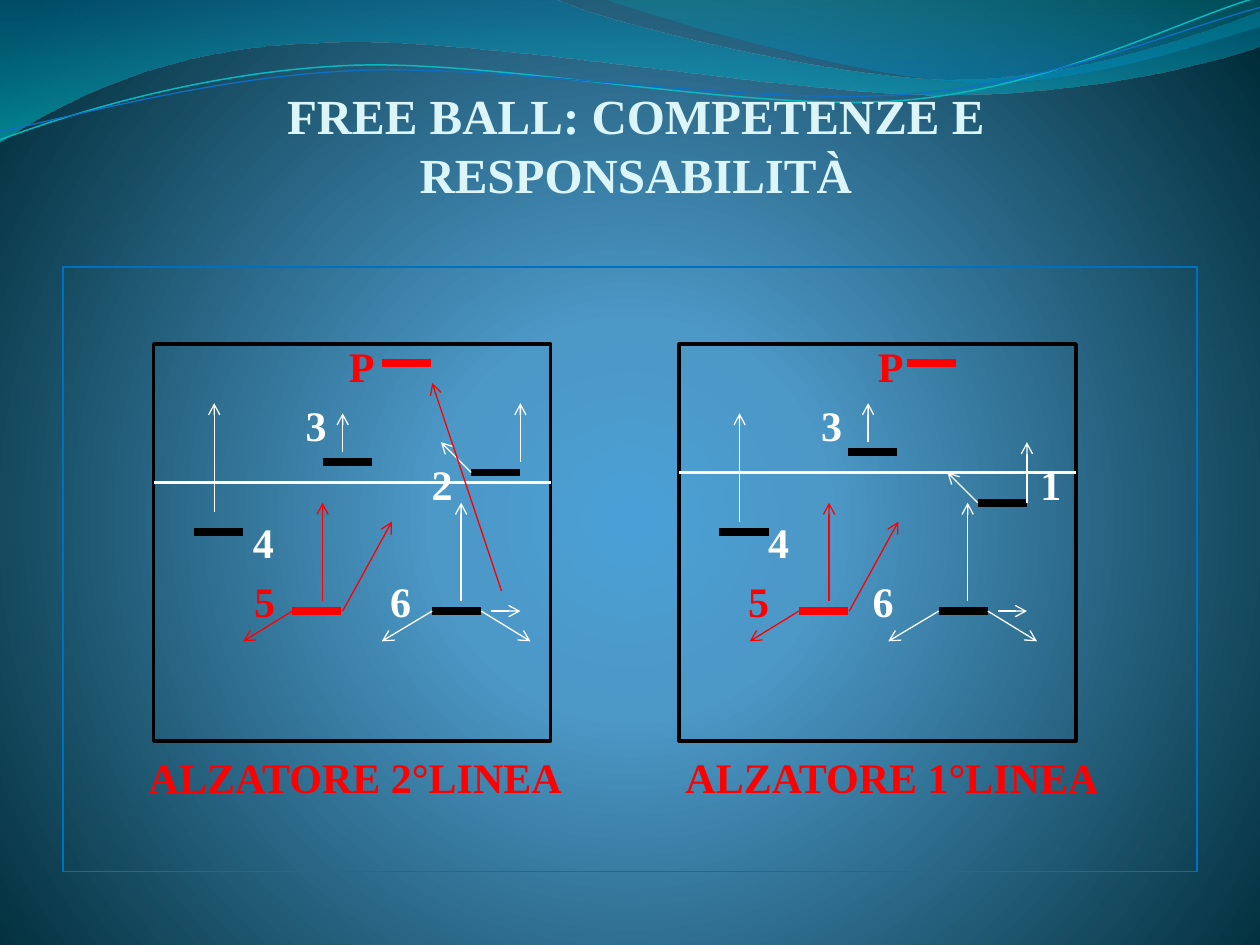
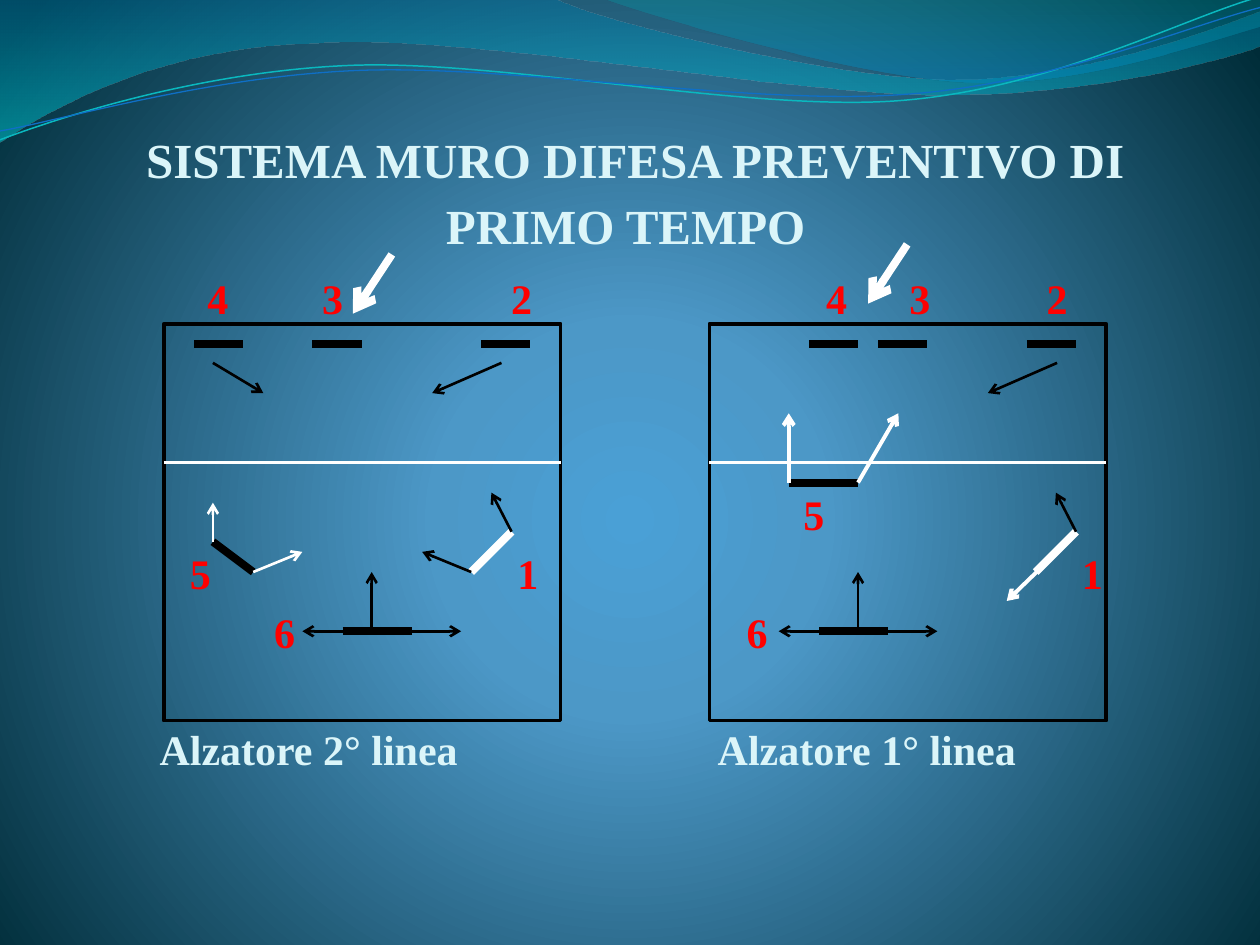
from lxml import etree
from pptx import Presentation
from pptx import util as u
from pptx.dml.color import RGBColor
from pptx.enum import shapes, text
from pptx.oxml import ns

FONT = "Times New Roman"
WHITE, BLACK, RED, BLUE, PALE = "FFFFFF", "000000", "FF0000", "0070C0", "DBF5F9"
BODY = (0.5, 2.12, 9, 4.8)
COURT_SIDE = 3.15
DASH = 0.39
ROW_HEIGHT, ROW_GAP = 32, 1.5

BACKDROP = [(0, "4AA0D6", 100), (25, "4C98C7", 100), (100, "002C38", 100)]
WIDE_WAVE = [(0, 0), (4.4, -0.01), (4.76, 0.17, 6.64, 0.63, 7.58, 0.63),
             (8.53, 0.63, 9.58, 0.26, 10, 0.09), (10.01, 0.36),
             (9.83, 0.44, 8.7, 0.76, 7.46, 0.75), (6.22, 0.75, 3.82, 0.28, 2.57, 0.34),
             (1.29, 0.36, 0.46, 0.83, -0.01, 1.13)]
RIGHT_WAVE = [(4.79, -0.01), (5.09, 0.11, 6.82, 0.62, 7.69, 0.65),
              (8.56, 0.69, 9.61, 0.32, 10, 0.21), (10, 0)]
TEAL_CURVE = [(0, 1.11), (0.48, 0.93, 1.58, 0.57, 2.77, 0.52),
              (3.95, 0.47, 5.93, 0.89, 7.13, 0.8), (8.33, 0.71, 9.38, 0.15, 9.98, -0.02)]
BLUE_CURVE = [(0, 1.04), (0.47, 0.96, 1.64, 0.61, 2.83, 0.56),
              (4.03, 0.51, 5.97, 0.84, 7.17, 0.75), (8.36, 0.67, 9.41, 0.21, 10, 0.06)]


def rgb(value):
    """Turn a hex string into a colour."""
    return RGBColor.from_string(value)


def add_child(parent, tag, **attributes):
    """Append a drawing element with the given attributes."""
    child = etree.SubElement(parent, ns.qn(tag))
    for name, value in attributes.items():
        child.set(name, str(value))
    return child


def set_gradient(owner, fill, stops, centre=None):
    """Give a fill a vertical gradient, or a round one about a centre."""
    fill.solid()
    solid = owner.find(ns.qn("a:solidFill"))
    gradient = etree.Element(ns.qn("a:gradFill"), rotWithShape="1")
    stop_list = add_child(gradient, "a:gsLst")
    for position, colour, opacity in stops:
        stop = add_child(stop_list, "a:gs", pos=position * 1000)
        tone = add_child(stop, "a:srgbClr", val=colour)
        add_child(tone, "a:alpha", val=opacity * 1000)
    if centre:
        circle = add_child(gradient, "a:path", path="circle")
        edges = {side: percent * 1000 for side, percent in zip("ltrb", centre)}
        add_child(circle, "a:fillToRect", **edges)
    else:
        add_child(gradient, "a:lin", ang=90 * 60000, scaled=0)
    owner.replace(solid, gradient)


def add_outline(slide, outline, close):
    """Draw a freeform of lines and cubic curves, without shadow."""
    points = [(u.Inches(x), u.Inches(y)) for segment in outline
              for x, y in zip(segment[::2], segment[1::2])]
    builder = slide.shapes.build_freeform(*points[0])
    builder.add_line_segments(points[1:], close=close)
    shape = builder.convert_to_shape()
    shape.shadow.inherit = False
    route = shape.element.find(".//" + ns.qn("a:path"))
    lines = iter(route.findall(ns.qn("a:lnTo")))
    for segment in outline[1:]:
        group = [next(lines) for _ in segment[::2]]
        if len(group) == 3:
            curve = etree.Element(ns.qn("a:cubicBezTo"))
            group[0].addprevious(curve)
            for line in group:
                curve.append(line[0])
                route.remove(line)
    return shape


def add_wave(slide, outline, stops):
    """Draw a translucent band at the top."""
    wave = add_outline(slide, outline, True)
    set_gradient(wave.element.spPr, wave.fill, stops)
    wave.line.fill.background()


def add_curve(slide, outline, colour, width):
    """Draw a thin curved line at the top."""
    curve = add_outline(slide, outline, False)
    curve.fill.background()
    curve.line.color.rgb = rgb(colour)
    curve.line.width = u.Pt(width)


def style_run(span, size, colour):
    """Set the bold lettering that all text shares."""
    span.font.name, span.font.size, span.font.bold = FONT, u.Pt(size), True
    span.font.color.rgb = rgb(colour)


def clear_margins(frame):
    """Remove the insets of a text frame and let it wrap."""
    frame.margin_left = frame.margin_right = frame.margin_top = frame.margin_bottom = 0
    frame.word_wrap = True


def add_title(slide, words, place, spacing, indent):
    """Add the centred title."""
    box = slide.shapes.add_textbox(*map(u.Inches, place))
    frame = box.text_frame
    clear_margins(frame)
    frame.vertical_anchor = text.MSO_ANCHOR.BOTTOM
    frame.text = words
    para = frame.paragraphs[0]
    para.alignment = text.PP_ALIGN.CENTER
    para.line_spacing = u.Pt(spacing)
    para._p.get_or_add_pPr().set("indent", str(u.Inches(indent)))
    style_run(para.runs[0], 28, PALE)


def fill_body(box, top, rows):
    """Write rows of labels, each centred on a tab stop."""
    frame = box.text_frame
    clear_margins(frame)
    frame.margin_top = u.Inches(top)
    frame.vertical_anchor = text.MSO_ANCHOR.TOP
    for number, (gap, labels) in enumerate(rows):
        para = frame.add_paragraph() if number else frame.paragraphs[0]
        para.alignment = text.PP_ALIGN.LEFT
        para.line_spacing = u.Pt(ROW_HEIGHT)
        para.space_before = u.Pt(gap)
        tabs = add_child(para._p.get_or_add_pPr(), "a:tabLst")
        for words, centre, colour in labels:
            add_child(tabs, "a:tab", pos=u.Inches(centre - BODY[0]), algn="ctr")
            span = para.add_run()
            span.text = "\t" + words
            style_run(span, 24, colour)


def add_frame(slide, place, colour, width):
    """Draw an unfilled rectangle."""
    frame = slide.shapes.add_shape(shapes.MSO_SHAPE.RECTANGLE, *map(u.Inches, place))
    frame.shadow.inherit = False
    frame.fill.background()
    frame.line.color.rgb = rgb(colour)
    frame.line.width = u.Pt(width)
    return frame


def add_lines(slide, segments, colour, width, arrow=False):
    """Draw straight lines, with an arrowhead at the end if asked."""
    for segment in segments:
        line = slide.shapes.add_connector(shapes.MSO_CONNECTOR.STRAIGHT,
                                          *map(u.Inches, segment))
        line.line.color.rgb = rgb(colour)
        line.line.width = u.Pt(width)
        if arrow:
            add_child(line.line._get_or_add_ln(), "a:tailEnd", type="arrow")
        add_child(line.element.spPr, "a:effectLst")


def add_players(slide, places, colour=BLACK, length=DASH):
    """Draw players as thick dashes."""
    add_lines(slide, [(x, y, x + length, y) for x, y in places], colour, 4.5)


def add_court(slide, left, top, attack_line):
    """Draw a half court with its attack line."""
    add_frame(slide, (left, top, COURT_SIDE, COURT_SIDE), BLACK, 2)
    add_lines(slide, [(left, attack_line, left + COURT_SIDE, attack_line)], WHITE, 1.5)


def shift(segments, dx):
    """Move segments sideways."""
    return [(x1 + dx, y1, x2 + dx, y2) for x1, y1, x2, y2 in segments]


def new_slide(deck, title, place, spacing, indent=0):
    """Add a slide with the waves and a title."""
    slide = deck.slides.add_slide(deck.slide_layouts[6])
    add_wave(slide, WIDE_WAVE, [(0, "0074A1", 45), (100, "00C6CF", 55)])
    add_wave(slide, RIGHT_WAVE, [(0, "00A1A9", 30), (80, "008BBF", 45)])
    add_curve(slide, TEAL_CURVE, "0AB8BF", 0.85)
    add_curve(slide, BLUE_CURVE, "0F6FC6", 0.75)
    add_title(slide, title, place, spacing, indent)
    return slide


def add_free_ball_court(slide, left, attack_line, back_x, spiker_y, setter, wing_top):
    """Draw a free ball court with its players and their moves."""
    add_court(slide, left, 2.73, attack_line)
    add_players(slide, [(left + 1.81, 2.88), (back_x, 4.85)], RED)
    add_players(slide, [(left + 0.32, 4.22), (left + 1.34, spiker_y), setter,
                        (back_x + 1.11, 4.85)])
    red_moves = [(0, 4.85, -0.39, 5.09), (0.24, 4.77, 0.24, 3.99), (0.4, 4.85, 0.79, 4.14)]
    white_moves = [(1.34, 4.77, 1.34, 3.99), (1.11, 4.85, 0.71, 5.09),
                   (1.58, 4.85, 1.81, 4.85), (1.5, 4.85, 1.89, 5.09)]
    add_lines(slide, shift(red_moves, back_x), RED, 0.75, True)
    add_lines(slide, shift(white_moves, back_x), WHITE, 0.75, True)
    x, y = setter
    front_moves = [(left + 0.48, wing_top + 0.86, left + 0.48, wing_top),
                   (left + 1.5, spiker_y - 0.08, left + 1.5, spiker_y - 0.39),
                   (x, y, x - 0.24, y - 0.24)]
    add_lines(slide, front_moves, WHITE, 0.75, True)


def build_free_ball(deck):
    """Build the free ball slide."""
    slide = new_slide(deck, "FREE BALL: COMPETENZE E RESPONSABILITÀ",
                      (0.67, 0.76, 8.75, 0.85), 33.5)
    fill_body(add_frame(slide, BODY, BLUE, 0.75), 0.54, [
        (0, [("P", 2.87, RED), ("P", 7.07, RED)]),
        (ROW_GAP, [("3", 2.51, WHITE), ("3", 6.6, WHITE)]),
        (ROW_GAP, [("2", 3.51, WHITE), ("1", 8.34, WHITE)]),
        (ROW_GAP, [("4", 2.09, WHITE), ("4", 6.18, WHITE)]),
        (ROW_GAP, [("5", 2.1, RED), ("6", 3.18, WHITE), ("5", 6.02, RED), ("6", 7.01, WHITE)]),
        (68.5, [("ALZATORE 2°LINEA", 2.82, RED), ("ALZATORE 1°LINEA", 7.08, RED)])])
    add_free_ball_court(slide, 1.22, 3.83, 2.32, 3.67, (3.74, 3.75), 3.2)
    add_free_ball_court(slide, 5.39, 3.75, 6.34, 3.59, (7.76, 3.99), 3.28)
    add_lines(slide, [(4.13, 3.67, 4.13, 3.2), (8.15, 3.99, 8.15, 3.51)], WHITE, 0.75, True)
    add_lines(slide, [(3.98, 4.69, 3.43, 3.04)], RED, 0.75, True)


def add_block_court(slide, left, front, middle_x, corner_x, cross_x, ball):
    """Draw a block and defence court with the moves both courts share."""
    add_court(slide, left, 2.57, 3.67)
    add_players(slide, [(x, 2.73) for x in front])
    add_players(slide, [(middle_x, 5.01)], length=0.55)
    add_lines(slide, [(corner_x, 4.54, corner_x + 0.32, 4.22)], WHITE, 4.5)
    moves = [(middle_x, 5.01, middle_x - 0.32, 5.01),
             (middle_x + 0.55, 5.01, middle_x + 0.94, 5.01),
             (corner_x + 0.32, 4.22, corner_x + 0.16, 3.91),
             (cross_x, 2.88, cross_x - 0.55, 3.12)]
    add_lines(slide, moves, BLACK, 1.5, True)
    x, y = ball
    add_lines(slide, [(x, y, x - 0.31, y + 0.47)], WHITE, 4.5, True)


def build_block_defence(deck):
    """Build the preventive block and defence slide."""
    slide = new_slide(deck, "SISTEMA MURO DIFESA PREVENTIVO DI PRIMO TEMPO",
                      (0.43, 0.52, 9.07, 1.5), 38, 0.15)
    fill_body(slide.shapes.add_textbox(*map(u.Inches, BODY)), 0, [
        (0, [("4", 1.73, RED), ("3", 2.64, RED), ("2", 4.14, RED),
             ("4", 6.64, RED), ("3", 7.3, RED), ("2", 8.39, RED)]),
        (91.5, [("5", 6.46, RED)]),
        (ROW_GAP, [("5", 1.59, RED), ("1", 4.19, RED), ("1", 8.67, RED)]),
        (ROW_GAP, [("6", 2.26, RED), ("6", 6.01, RED)]),
        (35, [("Alzatore 2° linea", 2.45, PALE), ("Alzatore 1° linea", 6.88, PALE)])])
    add_block_court(slide, 1.3, (1.54, 2.48, 3.82), 2.72, 3.74, 3.98, (3.11, 2.02))
    add_block_court(slide, 5.63, (6.42, 6.97, 8.15), 6.5, 8.22, 8.39, (7.2, 1.94))
    add_lines(slide, [(1.69, 4.3, 2.01, 4.54)], BLACK, 4.5)
    add_players(slide, [(6.26, 3.83)], length=0.55)
    add_lines(slide, [(2.95, 5.01, 2.95, 4.54), (6.81, 5.01, 6.81, 4.54),
                      (3.74, 4.54, 3.35, 4.38), (1.69, 2.88, 2.09, 3.12)], BLACK, 1.5, True)
    add_lines(slide, [(1.69, 4.3, 1.69, 3.99), (2.01, 4.54, 2.4, 4.38)], WHITE, 1.5, True)
    add_lines(slide, [(6.26, 3.83, 6.26, 3.28), (6.81, 3.83, 7.13, 3.28),
                      (8.31, 4.46, 7.99, 4.77)], WHITE, 2.25, True)


def main():
    """Build and save the deck."""
    deck = Presentation()
    deck.slide_width, deck.slide_height = u.Inches(10), u.Inches(7.5)
    master = deck.slide_master
    fill = master.background.fill
    set_gradient(master.element.cSld.bg.bgPr, fill, BACKDROP, (10, 110, 10, 100))
    build_free_ball(deck)
    build_block_defence(deck)
    deck.save("out.pptx")


if __name__ == "__main__":
    main()
